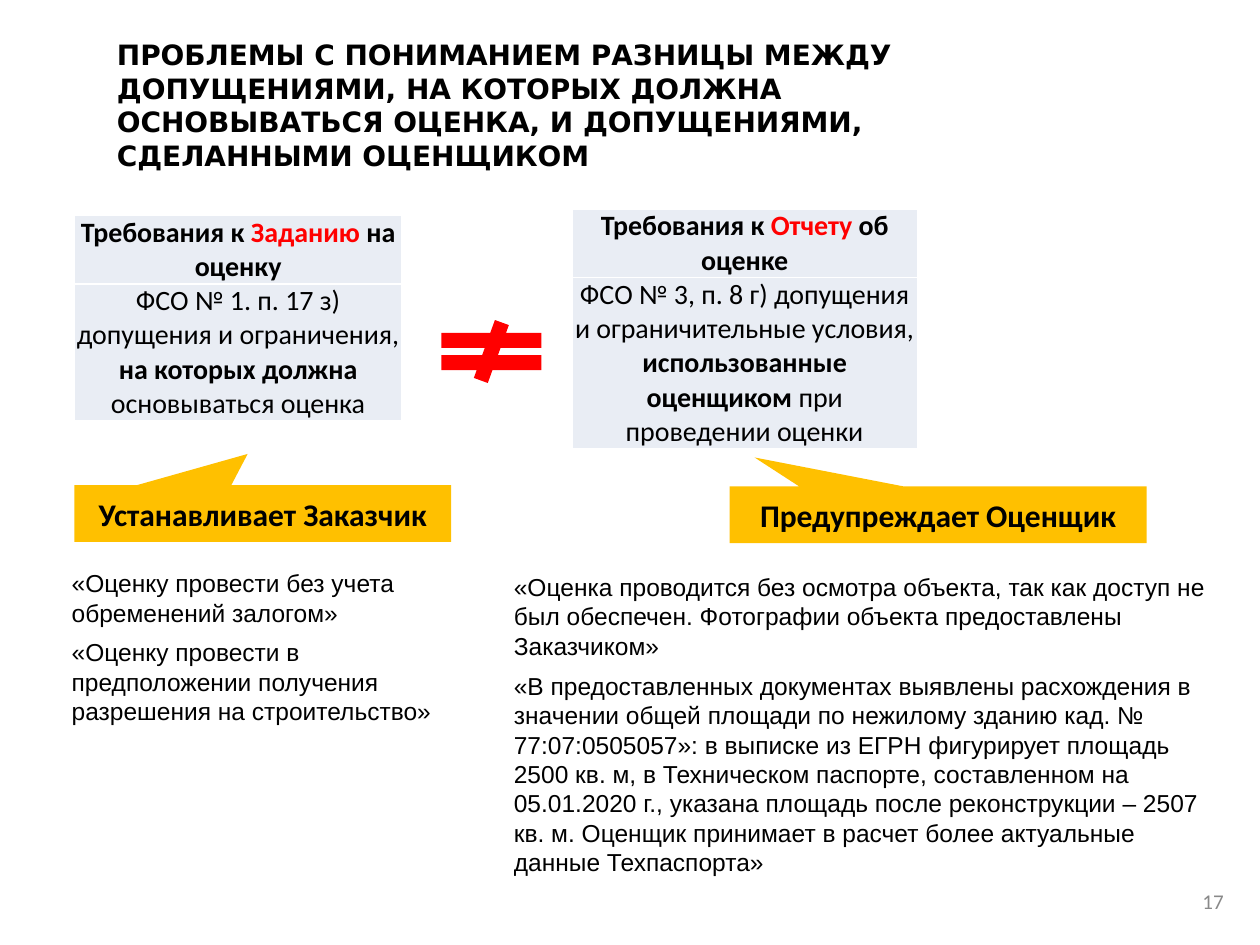
from dataclasses import dataclass

from lxml import etree
from pptx import Presentation
from pptx import util as u
from pptx.dml.color import RGBColor
from pptx.enum import shapes, text
from pptx.oxml import ns

COLORS = {
    "text": "000000",
    "accent": "FF0000",
    "cell": "E9EDF4",
    "border": "FFFFFF",
    "callout": "FFC000",
    "number": "898989",
}


@dataclass
class Box:
    left: float
    top: float
    width: float
    height: float

    def emu(self) -> list:
        return [u.Inches(v) for v in (self.left, self.top, self.width, self.height)]


@dataclass
class Run:
    text: str
    bold: bool = False
    color: str = "text"


@dataclass
class Style:
    font: str
    size: int
    bold: bool = False
    color: str = "text"
    align: text.PP_ALIGN = text.PP_ALIGN.LEFT
    after: int = 0


@dataclass
class Requirement:
    box: Box
    rows: list[float]
    cells: list[list[Run]]


@dataclass
class Callout:
    box: Box
    label: str
    tip: tuple[float, float]


@dataclass
class TextBlock:
    box: Box
    paragraphs: list[str]
    style: Style
    anchor: text.MSO_ANCHOR = text.MSO_ANCHOR.TOP


CENTER = text.PP_ALIGN.CENTER
MIDDLE = text.MSO_ANCHOR.MIDDLE
TITLE = Style("DejaVu Sans", 16, bold=True)
EXAMPLE = Style("Arial", 14, after=6)
LABEL = Style("Calibri", 18, bold=True, align=CENTER)
NUMBER = Style("Calibri", 12, color="number", align=text.PP_ALIGN.RIGHT)

REQUIREMENTS = [
    Requirement(Box(0.59, 1.71, 2.6, 1.6), [0.53, 1.07], [
        [Run("Требования к ", True), Run("Заданию", True, "accent"), Run(" на оценку", True)],
        [Run("ФСО № 1. п. 17 з) допущения и ограничения, "),
         Run("на которых должна ", True), Run("основываться оценка")],
    ]),
    Requirement(Box(4.54, 1.66, 2.74, 1.86), [0.53, 1.33], [
        [Run("Требования к ", True), Run("Отчету", True, "accent"), Run(" об оценке", True)],
        [Run("ФСО № 3, п. 8 г) допущения и ограничительные условия, "),
         Run("использованные оценщиком ", True), Run("при проведении оценки")],
    ]),
]

CALLOUTS = [
    Callout(Box(0.59, 3.85, 2.99, 0.45), "Устанавливает Заказчик", (-0.04, -1.05)),
    Callout(Box(5.79, 3.86, 3.31, 0.45), "Предупреждает Оценщик", (-0.44, -1.01)),
]

TEXTS = [
    TextBlock(Box(8.94, 6.95, 0.87, 0.4), ["17"], NUMBER, MIDDLE),
    TextBlock(Box(0.83, 0.25, 7.36, 0.55), [
        "ПРОБЛЕМЫ С ПОНИМАНИЕМ РАЗНИЦЫ МЕЖДУ ДОПУЩЕНИЯМИ, НА КОТОРЫХ ДОЛЖНА "
        "ОСНОВЫВАТЬСЯ ОЦЕНКА, И ДОПУЩЕНИЯМИ, СДЕЛАННЫМИ ОЦЕНЩИКОМ",
    ], TITLE),
    TextBlock(Box(0.47, 4.46, 3.39, 1.36), [
        "«Оценку провести без учета обременений залогом»",
        "«Оценку провести в предположении получения разрешения на строительство»",
    ], EXAMPLE),
    TextBlock(Box(3.98, 4.49, 5.72, 2.54), [
        "«Оценка проводится без осмотра объекта, так как доступ не был обеспечен. "
        "Фотографии объекта предоставлены Заказчиком»",
        "«В предоставленных документах выявлены расхождения в значении общей площади "
        "по нежилому зданию кад. № 77:07:0505057»: в выписке из ЕГРН фигурирует площадь "
        "2500 кв. м, в Техническом паспорте, составленном на 05.01.2020 г., указана площадь "
        "после реконструкции – 2507 кв. м. Оценщик принимает в расчет более актуальные "
        "данные Техпаспорта»",
    ], EXAMPLE),
]


def rgb(name: str) -> RGBColor:
    return RGBColor.from_string(COLORS[name])


def write(tf, paragraphs: list[str], style: Style) -> None:
    tf.word_wrap = True
    for i, line in enumerate(paragraphs):
        p = tf.add_paragraph() if i else tf.paragraphs[0]
        p.text = line
        p.alignment = style.align
        p.space_after = u.Pt(style.after)
        p.font.name = style.font
        p.font.size = u.Pt(style.size)
        p.font.bold = style.bold
        p.font.color.rgb = rgb(style.color)


def add_text(s, block: TextBlock) -> None:
    tf = s.shapes.add_textbox(*block.box.emu()).text_frame
    tf.vertical_anchor = block.anchor
    write(tf, block.paragraphs, block.style)


def add_borders(cell) -> None:
    tc_pr = cell._tc.get_or_add_tcPr()
    for side in ("lnL", "lnR", "lnT", "lnB"):
        ln = etree.SubElement(tc_pr, ns.qn(f"a:{side}"), w=str(u.Pt(1)))
        fill = etree.SubElement(ln, ns.qn("a:solidFill"))
        etree.SubElement(fill, ns.qn("a:srgbClr"), val=COLORS["border"])


def add_requirement(s, item: Requirement) -> None:
    table = s.shapes.add_table(len(item.rows), 1, *item.box.emu()).table
    table.first_row = table.horz_banding = False
    for i, (height, runs) in enumerate(zip(item.rows, item.cells)):
        table.rows[i].height = u.Inches(height)
        cell = table.cell(i, 0)
        add_borders(cell)
        cell.fill.solid()
        cell.fill.fore_color.rgb = rgb("cell")
        cell.margin_left = cell.margin_right = cell.margin_top = cell.margin_bottom = 0
        cell.vertical_anchor = MIDDLE
        p = cell.text_frame.paragraphs[0]
        p.alignment = CENTER
        p.font.name = "Calibri"
        p.font.size = u.Pt(16)
        for run in runs:
            r = p.add_run()
            r.text = run.text
            r.font.name = "Calibri"
            r.font.size = u.Pt(16)
            r.font.bold = run.bold
            r.font.color.rgb = rgb(run.color)


def add_filled(s, kind: shapes.MSO_SHAPE, box: Box, color: str):
    sp = s.shapes.add_shape(kind, *box.emu())
    sp.shadow.inherit = False
    sp.fill.solid()
    sp.fill.fore_color.rgb = rgb(color)
    sp.line.fill.background()
    return sp


def add_callout(s, item: Callout) -> None:
    sp = add_filled(s, shapes.MSO_SHAPE.RECTANGULAR_CALLOUT, item.box, "callout")
    for i, value in enumerate(item.tip):
        sp.adjustments[i] = value
    sp.text_frame.vertical_anchor = MIDDLE
    write(sp.text_frame, [item.label], LABEL)


def main() -> None:
    prs = Presentation()
    prs.slide_width, prs.slide_height = u.Inches(10), u.Inches(7.5)
    s = prs.slides.add_slide(prs.slide_layouts[6])
    for requirement in REQUIREMENTS:
        add_requirement(s, requirement)
    add_filled(s, shapes.MSO_SHAPE.MATH_NOT_EQUAL, Box(3.36, 2.54, 1.08, 0.5), "accent")
    for callout in CALLOUTS:
        add_callout(s, callout)
    for block in TEXTS:
        add_text(s, block)
    prs.save("out.pptx")


if __name__ == "__main__":
    main()
